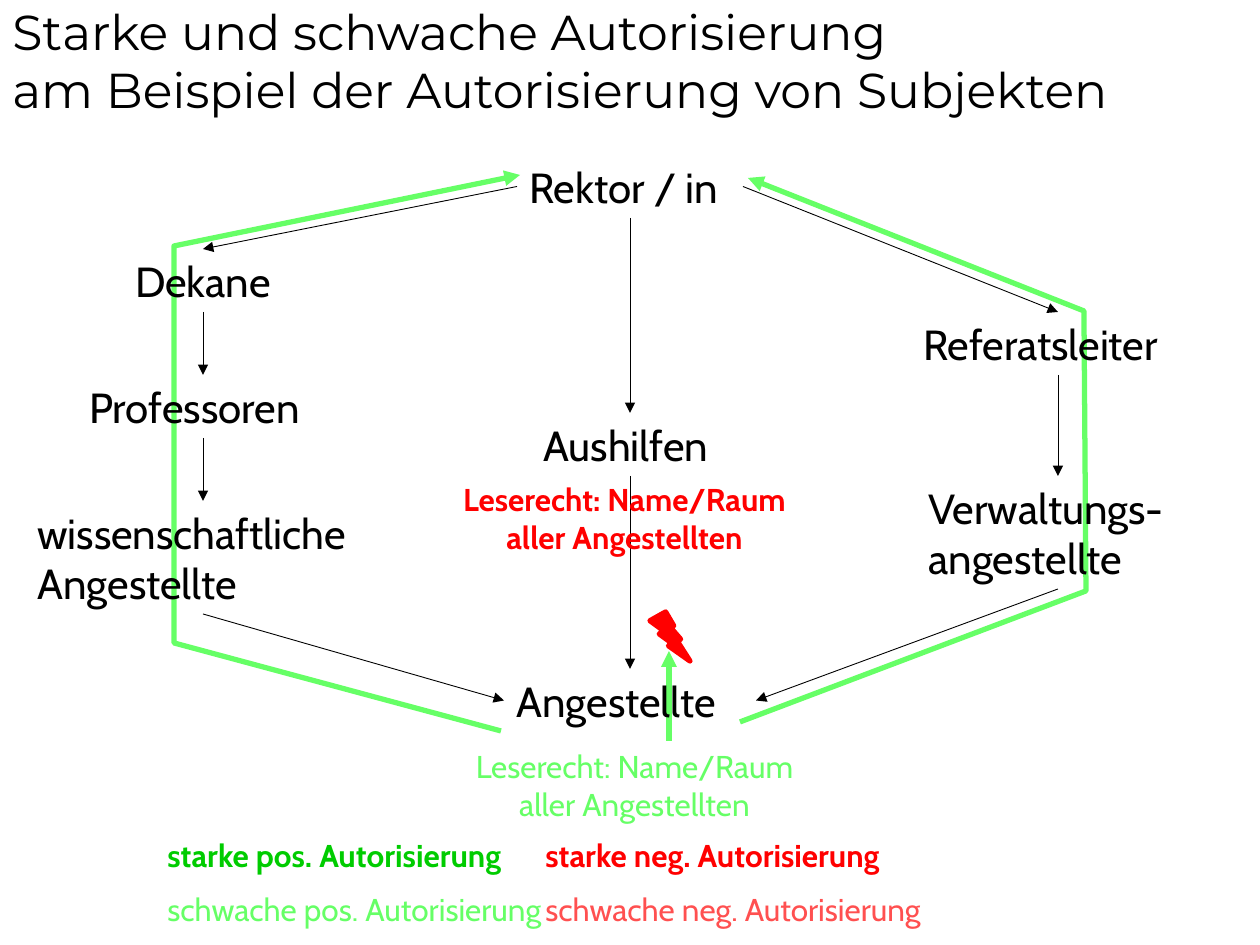
import pptx
import pptx.util
from dataclasses import dataclass
from lxml import etree
from pptx.dml.color import RGBColor
from pptx.enum.shapes import MSO_CONNECTOR, MSO_SHAPE
from pptx.enum.text import MSO_ANCHOR, PP_ALIGN
from pptx.oxml.ns import qn


@dataclass(frozen=True)
class Theme:
    black: str = "000000"
    strong_pos: str = "00CC00"
    weak_pos: str = "66FF66"
    strong_neg: str = "FF0000"
    weak_neg: str = "FF5050"
    title_font: str = "Montserrat"
    body_font: str = "Cabin"
    title_size: int = 28
    role_size: int = 24
    note_size: int = 18
    legend_gap: int = 9
    thin: float = 0.5
    hairline: float = 0.25
    thick: float = 3


THEME = Theme()
PX = pptx.util.Inches(1) / 126
TOP, LEFT, BOTTOM, RIGHT = range(4)

TITLE = "Starke und schwache Autorisierung\nam Beispiel der Autorisierung von Subjekten"
TITLE_BOX = (0, 0, 1260, 125)

# role: left, top, width, height
ROLES = {
    "Rektor / in": (517, 155, 226, 63),
    "Angestellte": (504, 669, 252, 63),
    "Referatsleiter": (911, 312, 294, 63),
    "Verwaltungs-angestellte": (916, 476, 284, 113),
    "Dekane": (108, 249, 190, 63),
    "Professoren": (77, 375, 252, 63),
    "wissenschaftliche\nAngestellte": (25, 501, 356, 113),
    "Aushilfen": (531, 413, 198, 63),
}
CENTERED_ROLES = {"Dekane"}

# upper role, side, lower role, side, line width
HIERARCHY = [
    ("Rektor / in", LEFT, "Dekane", TOP, THEME.thin),
    ("Dekane", BOTTOM, "Professoren", TOP, THEME.thin),
    ("Professoren", BOTTOM, "wissenschaftliche\nAngestellte", TOP, THEME.thin),
    ("wissenschaftliche\nAngestellte", BOTTOM, "Angestellte", LEFT, THEME.thin),
    ("Rektor / in", RIGHT, "Referatsleiter", TOP, THEME.thin),
    ("Referatsleiter", BOTTOM, "Verwaltungs-angestellte", TOP, THEME.thin),
    ("Verwaltungs-angestellte", BOTTOM, "Angestellte", RIGHT, THEME.thin),
    ("Rektor / in", BOTTOM, "Aushilfen", TOP, THEME.hairline),
    ("Aushilfen", BOTTOM, "Angestellte", TOP, THEME.hairline),
]

RIGHT_INHERITANCE = [
    [(740, 722), (1086, 591), (1084, 311), (748, 178)],
    [(501, 731), (174, 643), (174, 246), (520, 175)],
]
BLOCKED_INHERITANCE = [(669, 741), (669, 651)]
CONFLICT_BOX = (650, 612, 40, 49)

READ_RIGHT = "Leserecht: Name/Raum aller Angestellten"
READ_RIGHTS = [
    ((451, 741, 367, 88), THEME.weak_pos, False),
    ((441, 474, 367, 126), THEME.strong_neg, True),
]

LEGEND_BOX = (155, 830, 950, 107)
LEGEND = [
    (True, [("starke pos. Autorisierung\t", THEME.strong_pos),
            ("starke neg. Autorisierung", THEME.strong_neg)]),
    (False, [("schwache pos. Autorisierung\t", THEME.weak_pos),
             ("schwache neg. Autorisierung", THEME.weak_neg)]),
]


def emu(*lengths):
    return [round(length * PX) for length in lengths]


def set_font(font, size, color=None, bold=False, name=THEME.body_font):
    font.name, font.size, font.bold = name, pptx.util.Pt(size), bold
    if color:
        font.color.rgb = RGBColor.from_string(color)


def add_frame(slide, box):
    frame = slide.shapes.add_textbox(*emu(*box)).text_frame
    frame.word_wrap = True
    return frame


def add_label(slide, box, text, size, color=THEME.black, bold=False,
              name=THEME.body_font, centered=False):
    frame = add_frame(slide, box)
    paragraph = frame.paragraphs[0]
    paragraph.text = text
    paragraph.alignment = PP_ALIGN.CENTER if centered else PP_ALIGN.LEFT
    set_font(paragraph.font, size, color, bold, name)
    return frame


def make_arrow(arrow, color, width):
    """Style a connector or open outline as a shadowless arrow."""
    arrow.line.color.rgb = RGBColor.from_string(color)
    arrow.line.width = pptx.util.Pt(width)
    properties = arrow.element.spPr
    etree.SubElement(properties.find(qn("a:ln")), qn("a:tailEnd"), type="triangle")
    etree.SubElement(properties, qn("a:effectLst"))


def add_inheritance(slide):
    blocked = slide.shapes.add_connector(
        MSO_CONNECTOR.STRAIGHT, *emu(*BLOCKED_INHERITANCE[0], *BLOCKED_INHERITANCE[1]))
    make_arrow(blocked, THEME.weak_pos, THEME.thick)
    for route in RIGHT_INHERITANCE:
        start, *corners = [emu(*point) for point in route]
        builder = slide.shapes.build_freeform(*start)
        builder.add_line_segments(corners, close=False)
        outline = builder.convert_to_shape()
        outline.fill.background()
        make_arrow(outline, THEME.weak_pos, THEME.thick)


def add_hierarchy(slide):
    boxes = {}
    for role, box in ROLES.items():
        add_label(slide, box, role, THEME.role_size, centered=role in CENTERED_ROLES)
        boxes[role] = slide.shapes[-1]
    for upper, upper_side, lower, lower_side, width in HIERARCHY:
        edge = slide.shapes.add_connector(MSO_CONNECTOR.STRAIGHT, 0, 0, 0, 0)
        edge.begin_connect(boxes[upper], upper_side)
        edge.end_connect(boxes[lower], lower_side)
        make_arrow(edge, THEME.black, width)


def add_legend(slide):
    frame = add_frame(slide, LEGEND_BOX)
    for index, (bold, entries) in enumerate(LEGEND):
        paragraph = frame.add_paragraph() if index else frame.paragraphs[0]
        paragraph.space_before = pptx.util.Pt(THEME.legend_gap if index else 0)
        set_font(paragraph.font, THEME.note_size, bold=bold)
        for text, color in entries:
            run = paragraph.add_run()
            run.text = text
            run.font.color.rgb = RGBColor.from_string(color)


def add_conflict(slide):
    bolt = slide.shapes.add_shape(MSO_SHAPE.LIGHTNING_BOLT, *emu(*CONFLICT_BOX))
    bolt.shadow.inherit = False
    bolt.fill.solid()
    bolt.fill.fore_color.rgb = RGBColor.from_string(THEME.strong_neg)
    bolt.line.color.rgb = RGBColor.from_string(THEME.strong_neg)
    bolt.line.width = pptx.util.Pt(THEME.thick)


def main():
    deck = pptx.Presentation()
    deck.slide_width, deck.slide_height = emu(1260, 945)
    slide = deck.slides.add_slide(deck.slide_layouts[6])
    add_inheritance(slide)
    title = add_label(slide, TITLE_BOX, TITLE, THEME.title_size, name=THEME.title_font)
    title.vertical_anchor = MSO_ANCHOR.BOTTOM
    add_hierarchy(slide)
    add_legend(slide)
    for box, color, bold in READ_RIGHTS:
        add_label(slide, box, READ_RIGHT, THEME.note_size, color, bold, centered=True)
    add_conflict(slide)
    deck.save("out.pptx")


if __name__ == "__main__":
    main()
